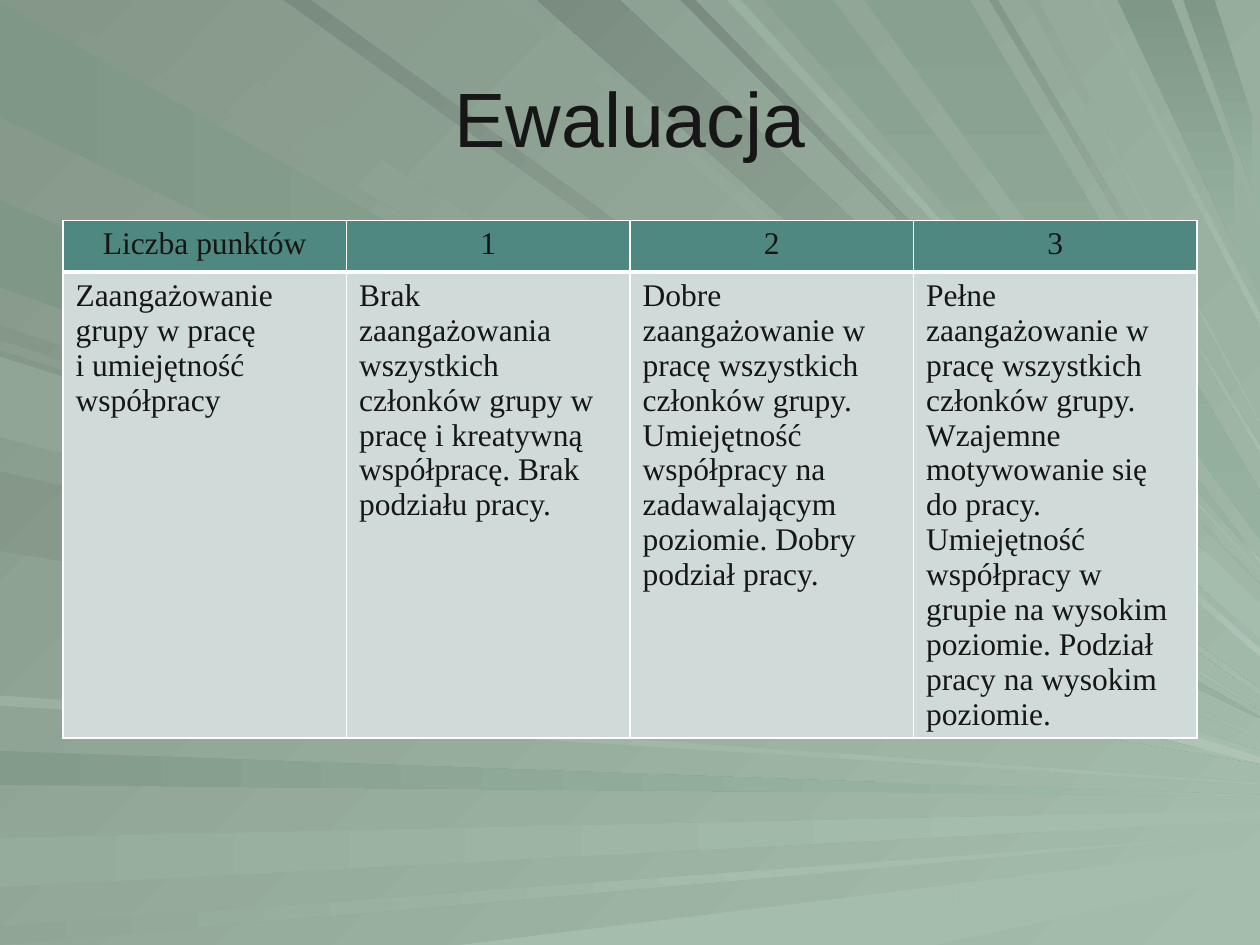
from dataclasses import dataclass

from lxml.etree import SubElement
from pptx import Presentation
from pptx.dml.color import RGBColor
from pptx.enum.text import MSO_ANCHOR, PP_ALIGN
from pptx.oxml import parse_xml
from pptx.oxml.ns import nsdecls, qn
from pptx.util import Pt

PX = 9144  # EMU, 100 px to the inch
W, H = 1000, 750


@dataclass(frozen=True)
class Theme:
    light: str = "A5BDAC"
    mid: str = "96B29E"
    glow: str = "B0C4B6"
    ink: str = "161616"
    header: str = "4E8880"
    body: str = "D0DAD8"
    border: str = "FFFFFF"
    title_font: str = "Arial"
    table_font: str = "Times New Roman"
    title_size: int = 44
    table_size: int = 18


T = Theme()
ACROSS, DIAGONAL, DOWN = 0, 45, 90
DEEP, DARK, DUSK, SOFT, HAZE, PALE, FULL = 50, 60, 69, 74, 80, 86, 100


def paint(fill, start, end, angle, shade):
    """Fill from start, darkened to shade percent, to end; angle runs clockwise."""
    if start == end and shade == FULL:
        fill.solid()
        fill.fore_color.rgb = RGBColor.from_string(start)
        return
    fill.gradient()
    fill.gradient_angle = (360 - angle) % 360
    for stop, color in zip(fill.gradient_stops, (start, end)):
        stop.color.rgb = RGBColor.from_string(color)
    if shade < FULL:
        first = fill.gradient_stops[0]._element[0]
        SubElement(first, qn("a:shade")).set("val", str(shade * 1000))


def write(tf, text, *, font, size, color=T.ink, align=PP_ALIGN.LEFT):
    tf.text = text
    p = tf.paragraphs[0]
    p.alignment = align
    for r in p.runs:
        r.font.name = font
        r.font.size = Pt(size)
        r.font.bold = False
        r.font.color.rgb = RGBColor.from_string(color)


# side it starts from, span there, span on the right edge, colour, angle, shade,
# then for a ray in two parts: x of the split and the colour its far part ends in
RAYS = [
    ("left", (2, 93), (569, 570), T.mid, ACROSS, DUSK),
    ("top", (101, 26), (562, 563), T.light, DIAGONAL, DARK),
    ("left", (596, 623), (631, 632), T.mid, ACROSS, SOFT, 701, T.light),
    ("left", (665, 704), (643, 651), T.light, ACROSS, HAZE, 831, T.light),
    ("left", (735, 750), (662, 662), T.light, ACROSS, SOFT, 628, T.light),
    ("bottom", (364, 742), (672, 694), T.light, ACROSS, FULL, 756, T.light),
    ("left", (258, 270), (589, 589), T.light, DIAGONAL, DARK, 873, T.light),
    ("left", (159, 228), (584, 585), T.mid, ACROSS, DUSK, 873, T.light),
    ("top", (416, 398), (515, 521), T.light, DIAGONAL, DUSK, 945, T.glow),
    ("top", (492, 426), (479, 507), T.light, DIAGONAL, DEEP, 960, T.light),
    ("top", (552, 540), (463, 463), T.light, DIAGONAL, DEEP),
    ("top", (661, 606), (445, 446), T.mid, DOWN, HAZE, 986, T.glow),
    ("top", (930, 887), (183, 237), T.mid, DOWN, DUSK, 980, T.mid),
    ("top", (964, 939), (114, 167), T.mid, DOWN, DUSK, 994, T.mid),
    ("left", (278, 342), (596, 602), T.light, DIAGONAL, DARK),
    ("left", (374, 437), (605, 606), T.light, DIAGONAL, DARK),
    ("left", (552, 560), (621, 623), T.light, ACROSS, PALE),
    ("top", (247, 225), (547, 552), T.light, DIAGONAL, DEEP),
    ("top", (588, 577), (453, 454), T.light, DIAGONAL, PALE),
    ("top", (770, 686), (390, 428), T.mid, DOWN, HAZE),
    ("top", (792, 785), (354, 360), T.light, DIAGONAL, DARK),
    ("top", (824, 815), (335, 336), T.light, DIAGONAL, SOFT),
    ("top", (872, 865), (249, 258), T.light, DIAGONAL, HAZE),
    ("left", (283, 347), (601, 606), T.light, ACROSS, SOFT, 635, T.glow),
]

ROWS = [
    ["Liczba punktów", "1", "2", "3"],
    [
        "Zaangażowanie grupy w pracę\vi umiejętność współpracy",
        "Brak zaangażowania wszystkich członków grupy w pracę i kreatywną "
        "współpracę. Brak podziału pracy.",
        "Dobre zaangażowanie w pracę wszystkich członków grupy. Umiejętność "
        "współpracy na zadawalającym poziomie. Dobry podział pracy.",
        "Pełne zaangażowanie w pracę wszystkich członków grupy. Wzajemne "
        "motywowanie się do pracy. Umiejętność współpracy w grupie na wysokim "
        "poziomie. Podział pracy na wysokim poziomie.",
    ],
]

prs = Presentation()
prs.slide_width, prs.slide_height = W * PX, H * PX
slide = prs.slides.add_slide(prs.slide_layouts[5])

# Background rays, placed behind the title
paint(slide.background.fill, T.light, T.light, DIAGONAL, DARK)
rays = slide.shapes.add_group_shape()
for side, span, ends, color, angle, shade, *far in RAYS:
    if side == "left":
        near = [(0, y) for y in span]
    else:
        near = [(x, 0 if side == "top" else H) for x in span]
    edge = [(W, y) for y in ends]
    parts = [(near, edge, color, shade)]
    if far:
        split, far_color = far
        cut = [(split, round(y + (y2 - y) * (split - x) / (W - x)))
               for (x, y), (_, y2) in zip(near, edge)]
        parts = [(near, cut, color, shade), (cut, edge, far_color, FULL)]
    for (a, b), (c, d), end, part_shade in parts:
        builder = rays.shapes.build_freeform(*a, scale=PX)
        builder.add_line_segments([c, d, b], close=True)
        sp = builder.convert_to_shape()
        sp.shadow.inherit = False
        sp.line.fill.background()
        paint(sp.fill, color, end, angle, part_shade)
slide.shapes._spTree.insert(2, rays._element)

# Title
title = slide.shapes.title
title.left, title.top, title.width, title.height = 50 * PX, 30 * PX, 900 * PX, 125 * PX
title.text_frame.vertical_anchor = MSO_ANCHOR.MIDDLE
write(title.text_frame, "Ewaluacja", font=T.title_font, size=T.title_size, align=PP_ALIGN.CENTER)

# Evaluation table
frame = slide.shapes.add_table(2, 4, 50 * PX, 175 * PX, 900 * PX, 441 * PX)
table = frame.table
for i, texts in enumerate(ROWS):
    table.rows[i].height = 41 * PX
    head = i == 0
    widths = {"L": 1, "R": 1, "T": 1 if head else 3, "B": 3 if head else 1}
    for j, text in enumerate(texts):
        cell = table.cell(i, j)
        write(cell.text_frame, text, font=T.table_font, size=T.table_size,
              align=PP_ALIGN.CENTER if head else PP_ALIGN.LEFT)
        cell.fill.solid()
        cell.fill.fore_color.rgb = RGBColor.from_string(T.header if head else T.body)
        for k, (edge_name, width) in enumerate(widths.items()):
            cell._tc.tcPr.insert(k, parse_xml(
                f'<a:ln{edge_name} {nsdecls("a")} w="{Pt(width)}"><a:solidFill>'
                f'<a:srgbClr val="{T.border}"/></a:solidFill></a:ln{edge_name}>'))
frame.height = 441 * PX

prs.save("out.pptx")
